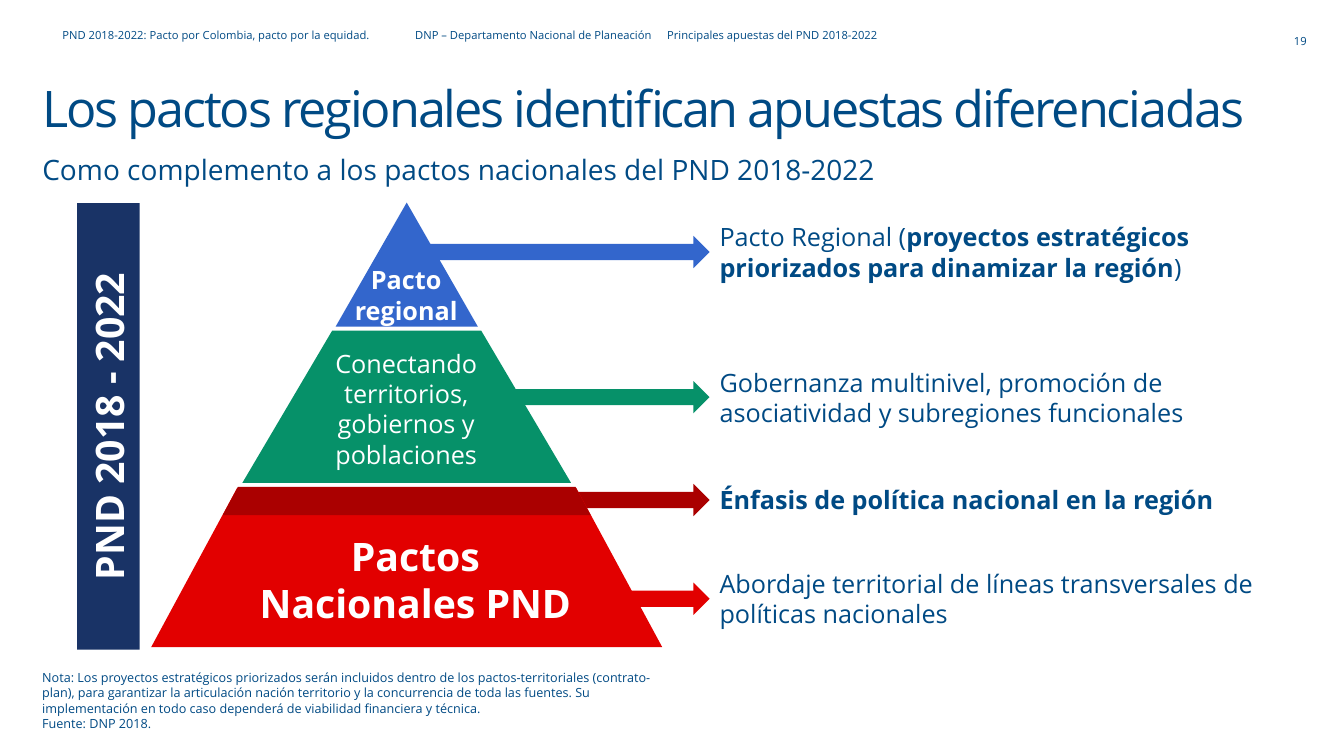
from dataclasses import dataclass

from lxml import etree
from pptx import Presentation
from pptx.dml.color import RGBColor
from pptx.enum.shapes import MSO_SHAPE
from pptx.enum.text import MSO_ANCHOR, MSO_AUTO_SIZE, PP_ALIGN
from pptx.oxml.ns import qn
from pptx.util import Inches, Pt

TOP, MID, LOW = MSO_ANCHOR.TOP, MSO_ANCHOR.MIDDLE, MSO_ANCHOR.BOTTOM
LEFT, CENTER = PP_ALIGN.LEFT, PP_ALIGN.CENTER
RECT, ARROW, LAYER = MSO_SHAPE.RECTANGLE, MSO_SHAPE.RIGHT_ARROW, MSO_SHAPE.TRAPEZOID
FIXED = MSO_AUTO_SIZE.NONE

CELL = 0.1  # inches per grid column and row
COLS, ROWS = 133.33, 75
AXIS = 40.35  # middle column of the pyramid
TIP = 70.4  # column where arrows end and their texts begin


@dataclass(frozen=True)
class Theme:
    font: str = "Open Sans"
    ink: str = "004A84"
    white: str = "FFFFFF"
    navy: str = "193366"
    blue: str = "3366CC"
    green: str = "069169"
    red: str = "E20000"
    dark: str = "AA0000"
    title: int = 36
    large: int = 28
    lead: int = 20
    text: int = 18
    note: int = 9
    head: int = 8


T = Theme()


def span(n):
    return Inches(n * CELL)


def apply(item, values):
    for name, value in values.items():
        setattr(item, name, value)


def place(shape, col, row, cols, rows):
    apply(shape, dict(left=span(col), top=span(row), width=span(cols), height=span(rows)))


def write(shape, text, size, color=T.ink, bold=False, align=LEFT, anchor=MID,
          lines=1.0, tabs=(), track=0):
    """Fill a shape with text; parts between asterisks turn bold."""
    frame = shape.text_frame
    apply(frame, dict(word_wrap=True, auto_size=FIXED, vertical_anchor=anchor))
    for i, line in enumerate(text.split("\n")):
        para = frame.add_paragraph() if i else frame.paragraphs[0]
        apply(para, dict(alignment=align, line_spacing=lines,
                         space_before=Pt(0), space_after=Pt(0)))
        props = para._p.get_or_add_pPr()
        props.set("marL", "0")
        props.set("indent", "0")
        etree.SubElement(props, qn("a:buNone"))
        if tabs:
            stops = etree.SubElement(props, qn("a:tabLst"))
            for col in tabs:
                etree.SubElement(stops, qn("a:tab"), pos=str(span(col)), algn="l")
        for j, part in enumerate(line.split("*")):
            if not part:
                continue
            run = para.add_run()
            run.text = part
            apply(run.font, dict(name=T.font, size=Pt(size), bold=bold or j % 2 == 1))
            run.font.color.rgb = RGBColor.from_string(color)
            if track:
                run._r.get_or_add_rPr().set("spc", str(track))


def label(slide, area, text, size, **look):
    box = slide.shapes.add_textbox(0, 0, 0, 0)
    place(box, *area)
    write(box, text, size, **look)


def block(slide, kind, area, color):
    shape = slide.shapes.add_shape(kind, 0, 0, 0, 0)
    place(shape, *area)
    shape.shadow.inherit = False
    shape.fill.solid()
    shape.fill.fore_color.rgb = RGBColor.from_string(color)
    shape.line.fill.background()
    return shape


def layer(slide, row, cols, rows, slant, color):
    shape = block(slide, LAYER, (AXIS - cols / 2, row, cols, rows), color)
    shape.adjustments[0] = slant


def branch(slide, mid, start, color, text):
    block(slide, ARROW, (start, mid - 1.6, TIP - start, 3.2), color)
    label(slide, (TIP, mid - 4, 55.3, 8), text, T.text)


def main():
    deck = Presentation()
    apply(deck, dict(slide_width=span(COLS), slide_height=span(ROWS)))
    slide = deck.slides.add_slide(deck.slide_layouts[1])

    # Title and subtitle
    title, lead = slide.placeholders
    place(title, 3.2, 7.8, 127, 6.1)
    write(title, "Los pactos regionales identifican apuestas diferenciadas",
          T.title, anchor=TOP, lines=0.9, track=-150)
    place(lead, 3.2, 15, 127, 3.9)
    write(lead, "Como complemento a los pactos nacionales del PND 2018-2022",
          T.lead, anchor=TOP, lines=0.9)

    # Running header and page number
    label(slide, (5.2, 2.2, 117.1, 2.5),
          "PND 2018-2022: Pacto por Colombia, pacto por la equidad."
          "\tDNP – Departamento Nacional de Planeación"
          "\tPrincipales apuestas del PND 2018-2022", T.head, tabs=(50, 90))
    label(slide, (127, 2.9, 4, 2.4), "19", T.head, align=CENTER)

    # Upright bar
    bar = block(slide, RECT, (-11.4, 39.2, 44.3, 6.2), T.navy)
    bar.rotation = 270
    write(bar, "PND 2018 - 2022", T.large, color=T.white, bold=True, align=CENTER)

    # Arrows with their texts
    for mid, start, color, text in (
        (25, 42, T.blue,
         "Pacto Regional (*proyectos estratégicos priorizados para dinamizar la región*)"),
        (39.4, 50.1, T.green,
         "Gobernanza multinivel, promoción de asociatividad y subregiones funcionales"),
        (49.6, 56.7, T.dark, "*Énfasis de política nacional en la región*"),
        (59.4, 60.1, T.red,
         "Abordaje territorial de líneas transversales de políticas nacionales"),
    ):
        branch(slide, mid, start, color, text)

    # Pyramid layers
    for row, cols, rows, slant, color in (
        (20.1, 14.1, 12.3, 0.58, T.blue),
        (32.8, 32.6, 15.1, 0.59, T.green),
        (48.4, 50.7, 15.8, 0.54, T.red),
        (48.3, 36.5, 2.8, 0.54, T.dark),
    ):
        layer(slide, row, cols, rows, slant, color)

    # Pyramid labels
    for axis, row, cols, rows, text, size, bold in (
        (40.3, 25.7, 17, 7.1, "Pacto\nregional", T.text, True),
        (40.3, 34.1, 22.6, 12.9, "Conectando territorios, gobiernos y poblaciones",
         T.text, False),
        (41.2, 52.6, 36.8, 9.7, "Pactos Nacionales PND", T.large, True),
    ):
        label(slide, (axis - cols / 2, row, cols, rows), text, size,
              color=T.white, bold=bold, align=CENTER)

    # Note and source
    label(slide, (3.2, 66, 63.5, 7),
          "Nota: Los proyectos estratégicos priorizados serán incluidos dentro de los "
          "pactos-territoriales (contrato-plan), para garantizar la articulación nación "
          "territorio y la concurrencia de toda las fuentes. Su implementación en todo "
          "caso dependerá de viabilidad financiera y técnica.\nFuente: DNP 2018.",
          T.note, anchor=LOW)

    deck.save("out.pptx")


if __name__ == "__main__":
    main()
